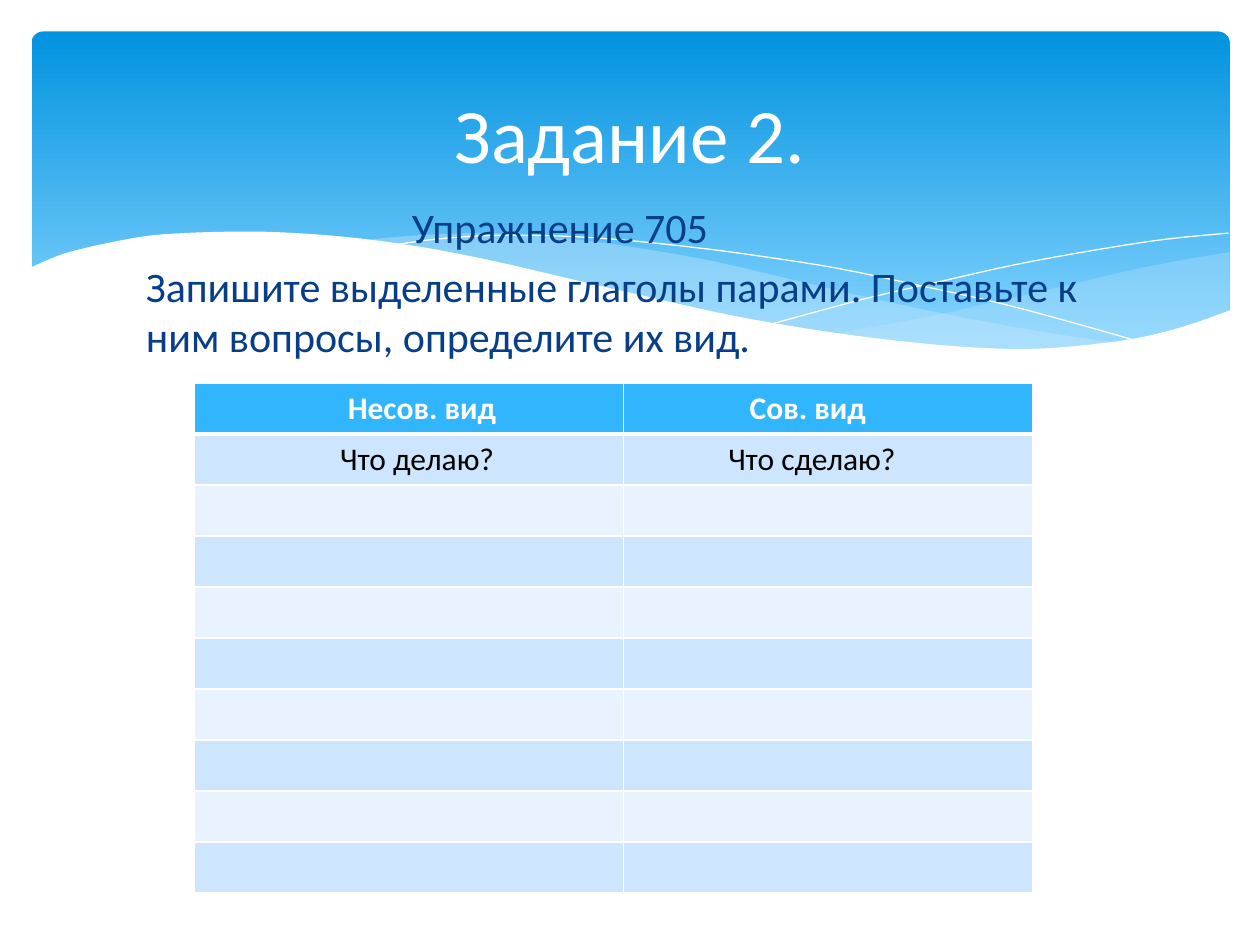
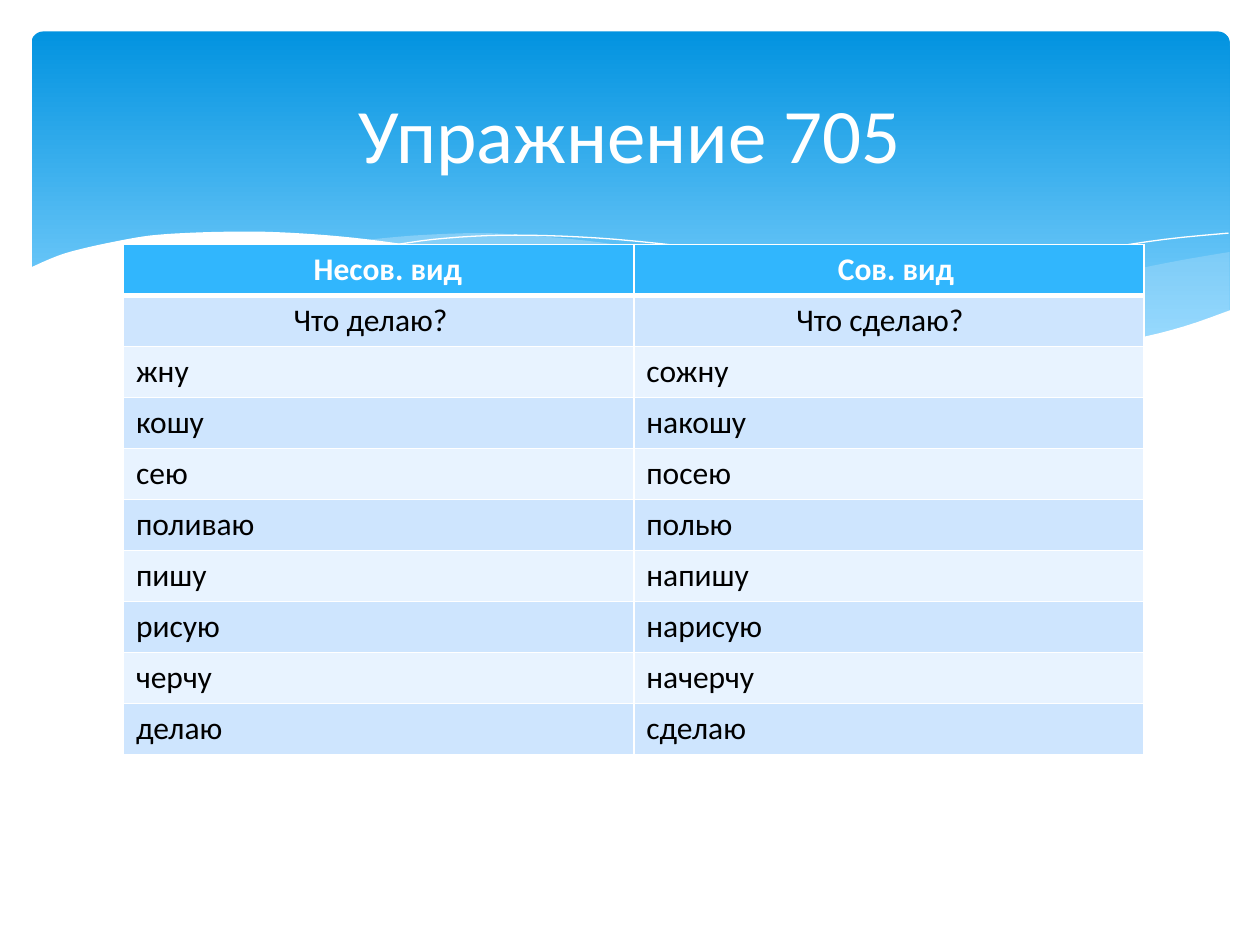
from lxml import etree
from pptx import Presentation
from pptx.dml.color import RGBColor
from pptx.enum.shapes import MSO_SHAPE
from pptx.enum.text import MSO_ANCHOR, PP_ALIGN
from pptx.oxml.ns import qn
from pptx.util import Inches, Pt

ROUNDED = MSO_SHAPE.ROUNDED_RECTANGLE
MIDDLE = MSO_ANCHOR.MIDDLE
CENTER = PP_ALIGN.CENTER
LEFT = PP_ALIGN.LEFT

COLORS = {
    "white": "FFFFFF",
    "black": "000000",
    "navy": "073E87",
    "band_top": "0293E0",
    "band_bottom": "83D3FE",
    "swell": "C6E7FC",
    "header": "31B6FD",
    "row_dark": "CEE5FE",
    "row_light": "E8F3FF",
}

SWELL_RIGHT_TOP = [(9.76, 2), (9.35, 2.07), (8.91, 2.16), (8.32, 2.3),
                   (7.79, 2.42), (7.29, 2.53), (6.61, 2.65)]
SWELL_RIGHT_BOTTOM = [(6.61, 2.65), (7.19, 2.72), (7.69, 2.77), (8.14, 2.78),
                      (8.63, 2.75), (9.05, 2.69), (9.42, 2.59), (9.76, 2.47)]
SWELL_MID_TOP = [(8.93, 2.73), (8.37, 2.65), (7.75, 2.54), (7.06, 2.4),
                 (6.29, 2.22), (5.69, 2.08), (5.14, 1.98), (4.65, 1.91),
                 (4.2, 1.87), (3.8, 1.85), (3.28, 1.87), (2.86, 1.91)]
SWELL_MID_BOTTOM = [(2.86, 1.91), (3.42, 1.99), (4.04, 2.11), (4.49, 2.22),
                    (5.3, 2.4), (6.01, 2.55), (6.65, 2.66), (7.22, 2.74),
                    (7.73, 2.77), (8.18, 2.78), (8.57, 2.77), (8.93, 2.73)]
LINE_FALLING = [(3.09, 1.95), (3.44, 1.9), (3.87, 1.87), (4.33, 1.87),
                (4.89, 1.9), (5.56, 1.97), (6.08, 2.04), (6.65, 2.13),
                (7.27, 2.26), (7.95, 2.41), (8.69, 2.61), (9.07, 2.72)]
LINE_RISING = [(6.13, 2.57), (6.53, 2.46), (6.95, 2.35), (7.48, 2.23),
               (8.06, 2.1), (8.66, 1.99), (9.24, 1.9), (9.75, 1.85)]
WAVE_TOP = [(9.77, 2.46), (9.4, 2.59), (8.99, 2.69), (8.5, 2.75),
            (8.09, 2.77), (7.61, 2.75), (7.08, 2.7), (6.48, 2.62),
            (5.79, 2.5), (5.03, 2.33), (4.47, 2.2), (3.91, 2.07),
            (3.4, 1.97), (2.92, 1.9), (2.5, 1.86), (2.11, 1.84),
            (1.77, 1.84), (1.46, 1.85), (1.19, 1.87), (0.95, 1.91),
            (0.67, 1.97), (0.46, 2.03), (0.23, 2.13)]
WAVE_BASE = [(0.23, 3.29), (9.77, 3.29)]

HEADER = ("Несов. вид", "Сов. вид")
QUESTIONS = ("Что делаю?", "Что сделаю?")
VERB_PAIRS = [
    ("жну", "сожну"),
    ("кошу", "накошу"),
    ("сею", "посею"),
    ("поливаю", "полью"),
    ("пишу", "напишу"),
    ("рисую", "нарисую"),
    ("черчу", "начерчу"),
    ("делаю", "сделаю"),
]


def rgb(name):
    return RGBColor.from_string(COLORS[name])


def curve(points, steps=4):
    padded = [points[0], *points, points[-1]]
    smooth = [points[0]]
    for a, b, c, d in zip(padded, padded[1:], padded[2:], padded[3:]):
        for i in range(1, steps + 1):
            t = i / steps
            smooth.append(tuple(
                q + t * (r - p + t * (2 * p - 5 * q + 4 * r - s
                                      + t * (3 * q - p - 3 * r + s))) / 2
                for p, q, r, s in zip(a, b, c, d)))
    return smooth


class Deck:
    font = "Calibri"
    row_height = 0.405

    def __init__(self):
        self.prs = Presentation()
        self.prs.slide_width = Inches(10)
        self.prs.slide_height = Inches(7.5)
        self.s = None

    def slide(self):
        self.s = self.prs.slides.add_slide(self.prs.slide_layouts[6])
        self.band()
        self.freeform(curve(SWELL_RIGHT_TOP) + curve(SWELL_RIGHT_BOTTOM), "swell", 29)
        self.freeform(curve(SWELL_MID_TOP) + curve(SWELL_MID_BOTTOM), "swell", 40)
        self.freeform(curve(LINE_FALLING))
        self.freeform(curve(LINE_RISING))
        self.freeform(curve(WAVE_TOP) + WAVE_BASE, "white")

    def band(self):
        sp = self.s.shapes.add_shape(
            ROUNDED, Inches(0.25), Inches(0.25), Inches(9.51), Inches(2.7))
        sp.shadow.inherit = False
        sp.adjustments[0] = 0.034
        sp.line.fill.background()
        sp.fill.gradient()
        sp.fill.gradient_angle = 270
        stops = sp.fill.gradient_stops
        for stop, name, position in zip(stops, ("band_top", "band_bottom"), (0, 0.9)):
            stop.color.rgb = rgb(name)
            stop.position = position

    def freeform(self, points, fill=None, opacity=100):
        points = [(Inches(x), Inches(y)) for x, y in points]
        builder = self.s.shapes.build_freeform(*points[0])
        builder.add_line_segments(points[1:], close=fill is not None)
        sp = builder.convert_to_shape()
        sp.shadow.inherit = False
        if fill is None:
            sp.fill.background()
            sp.line.color.rgb = rgb("white")
            sp.line.width = Pt(0)
            return
        sp.line.fill.background()
        sp.fill.solid()
        sp.fill.fore_color.rgb = rgb(fill)
        if opacity < 100:
            color = sp.fill._xPr.find(".//" + qn("a:srgbClr"))
            etree.SubElement(color, qn("a:alpha"), val=str(opacity * 1000))

    def paragraph(self, p, text, size, color, bold=False, align=LEFT, indent=0):
        p.text = text
        p.alignment = align
        if indent:
            p._p.get_or_add_pPr().set("marL", str(Inches(indent)))
        for r in p.runs:
            r.font.name = self.font
            r.font.size = Pt(size)
            r.font.bold = bold
            r.font.color.rgb = rgb(color)

    def text_box(self, left, top, width, height):
        sp = self.s.shapes.add_textbox(
            Inches(left), Inches(top), Inches(width), Inches(height))
        sp.text_frame.word_wrap = True
        return sp.text_frame

    def title(self, text):
        tf = self.text_box(0.5, 0.37, 9, 1.37)
        tf.vertical_anchor = MIDDLE
        self.paragraph(tf.paragraphs[0], text, 44, "white", align=CENTER)

    def body(self, lines):
        tf = self.text_box(1.06, 1.55, 7.99, 5.15)
        for i, (text, indent) in enumerate(lines):
            p = tf.add_paragraph() if i else tf.paragraphs[0]
            self.paragraph(p, text, 24, "navy", indent=indent)
            p.space_before = Pt(4.8)

    def borders(self, cell, widths):
        tcPr = cell._tc.get_or_add_tcPr()
        for i, (side, width) in enumerate(zip("LRTB", widths)):
            ln = etree.Element(qn(f"a:ln{side}"), w=str(Pt(width)))
            fill = etree.SubElement(ln, qn("a:solidFill"))
            etree.SubElement(fill, qn("a:srgbClr"), val=COLORS["white"])
            tcPr.insert(i, ln)

    def table(self, left, top, col_widths, rows, indents):
        table = self.s.shapes.add_table(
            len(rows), len(col_widths), Inches(left), Inches(top),
            Inches(sum(col_widths)), Inches(self.row_height * len(rows))).table
        for column, width in zip(table.columns, col_widths):
            column.width = Inches(width)
        for i, row in enumerate(rows):
            table.rows[i].height = Inches(self.row_height)
            fill = "header" if i == 0 else ("row_light", "row_dark")[i % 2]
            for j, text in enumerate(row):
                cell = table.cell(i, j)
                cell.fill.solid()
                cell.fill.fore_color.rgb = rgb(fill)
                self.borders(cell, (1, 1, 3 if i == 1 else 1, 3 if i == 0 else 1))
                if text:
                    self.paragraph(
                        cell.text_frame.paragraphs[0], text, 18,
                        "black" if i else "white", bold=i == 0,
                        indent=indents[i][j] if i < len(indents) else 0)


def main():
    deck = Deck()

    deck.slide()
    deck.body([
        ("Упражнение 705", 2.11),
        ("Запишите выделенные глаголы парами. Поставьте к ним вопросы, "
         "определите их вид.", 0),
    ])
    deck.title("Задание 2.")
    blank_rows = [("", "")] * len(VERB_PAIRS)
    deck.table(1.54, 3.04, (3.41, 3.25), [HEADER, QUESTIONS, *blank_rows],
               [(1.12, 0.9), (1.06, 0.73)])

    deck.slide()
    deck.table(0.98, 1.94, (4.05, 4.05), [HEADER, QUESTIONS, *VERB_PAIRS],
               [(1.41, 1.52), (1.25, 1.19)])
    deck.title("Упражнение 705")

    deck.prs.save("out.pptx")


if __name__ == "__main__":
    main()
